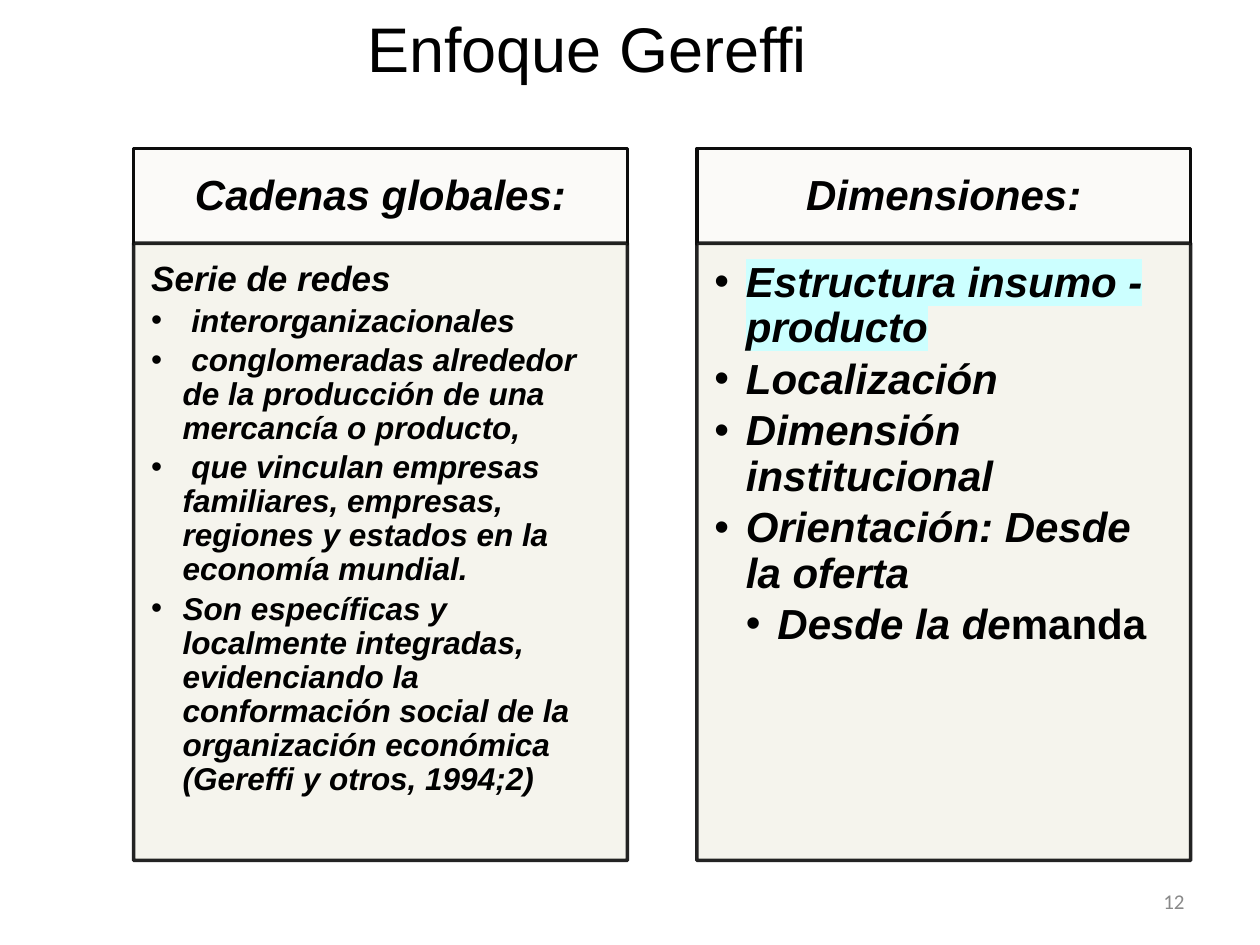
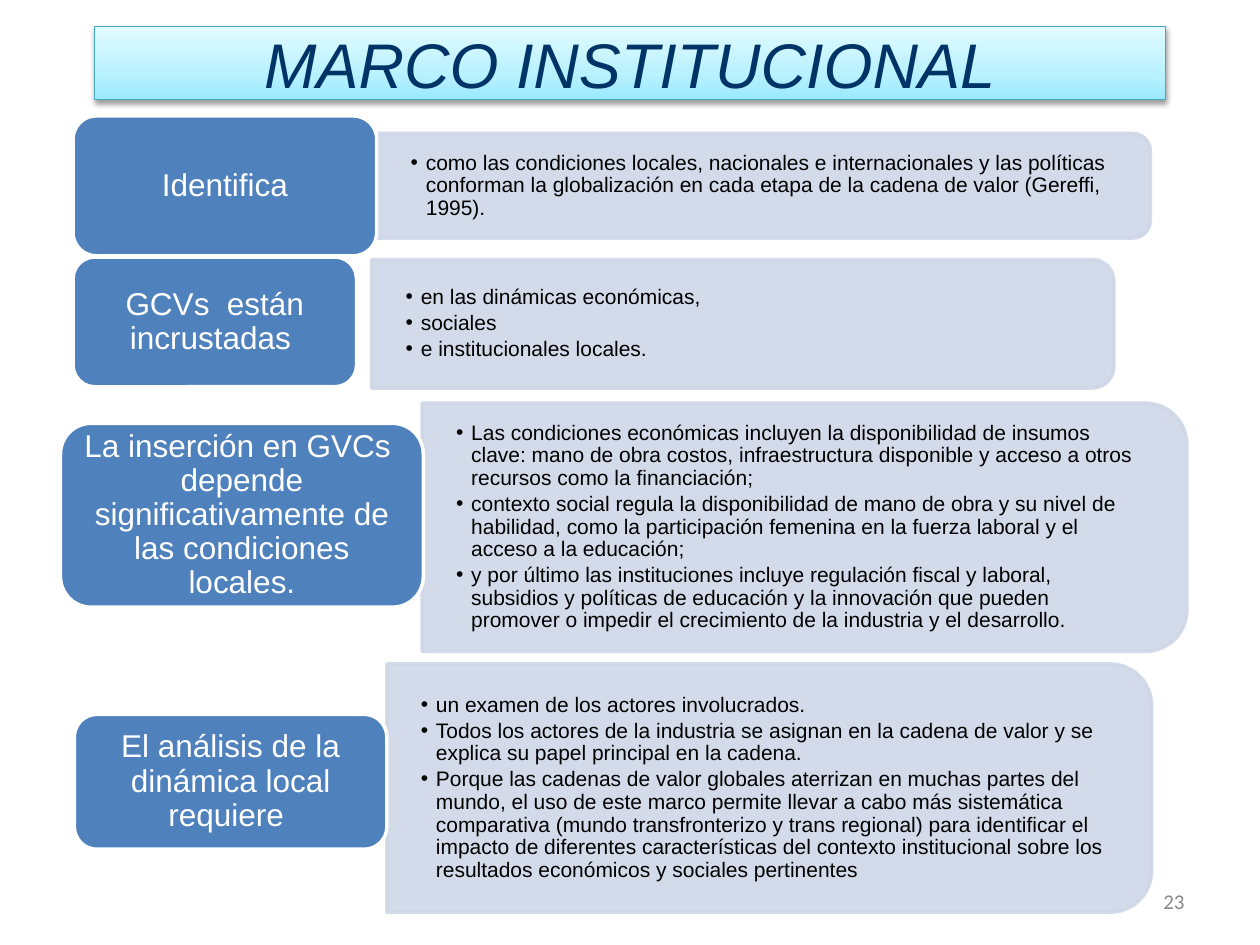
"""Build two slides: the approach in two cards and the institutional frame."""
from copy import deepcopy
from dataclasses import dataclass

from pptx import Presentation
from pptx.dml.color import RGBColor
from pptx.enum.shapes import MSO_SHAPE as Kind
from pptx.enum.text import MSO_ANCHOR as Anchor, MSO_AUTO_SIZE as Fit, PP_ALIGN as Align
from pptx.oxml import parse_xml
from pptx.oxml.ns import nsdecls, qn
from pptx.util import Pt
from lxml.etree import SubElement

PX = 9144


@dataclass(frozen=True)
class Theme:
    font: str = "Arial"
    small: str = "Calibri"
    ink: str = "000000"
    white: str = "FFFFFF"
    navy: str = "003366"
    grey: str = "898989"
    edge: str = "0C0C0C"
    head: str = "FBFAF8"
    body: str = "F4F3EC"
    mark: str = "CCFFFF"
    blue: str = "4F81BD"
    pale: str = "CFD7E7"
    rim: str = "45A9C4"
    low: str = "9BE9FF"
    mid: str = "B8F1FF"
    high: str = "E2FBFF"
    title: int = 36
    big: int = 24
    lead: int = 20
    text: int = 18
    note: int = 12


T = Theme()


def box(slide, kind, place, fill, line, alpha=100):
    shape = slide.shapes.add_shape(kind, *[round(n * PX) for n in place])
    shape.shadow.inherit = False
    shape.fill.solid()
    shape.fill.fore_color.rgb = RGBColor.from_string(fill)
    shape.line.color.rgb = RGBColor.from_string(line)
    shape.line.width = Pt(2)
    if alpha < 100:
        for tint in shape.element.spPr.iter(qn("a:srgbClr")):
            SubElement(tint, qn("a:alpha"), val=str(alpha * 1000))
    return shape


def write(shape, lines, size, color, pad=(10, 5, 10, 5), align=Align.CENTER,
          anchor=Anchor.MIDDLE, hang=0, gap=0, space=0.9, font=T.font,
          bold=False, slant=False):
    frame = shape.text_frame
    frame.text = "\n".join(lines)
    frame.word_wrap = True
    frame.auto_size = Fit.NONE
    frame.vertical_anchor = anchor
    frame.margin_left, frame.margin_top, frame.margin_right, frame.margin_bottom = [
        n * PX for n in pad]
    for spot, para in enumerate(frame.paragraphs):
        para.alignment = align
        para.line_spacing = space
        para.space_before = Pt(gap if spot else 0)
        for run in para.runs:
            run.font.name = font
            run.font.size = Pt(size)
            run.font.bold = bold
            run.font.italic = slant
            run.font.color.rgb = RGBColor.from_string(color)
        if hang:
            props = para._p.get_or_add_pPr()
            props.set("marL", str(hang * PX))
            props.set("indent", str(-hang * PX))
            tint = SubElement(props, qn("a:buClr"))
            SubElement(tint, qn("a:srgbClr"), val=T.ink)
            SubElement(props, qn("a:buFont"), typeface=T.font)
            SubElement(props, qn("a:buChar"), char="•")
    return frame.paragraphs


deck = Presentation()
deck.slide_width, deck.slide_height = 1000 * PX, 750 * PX

pages = []
for name, place, color, slant, num in [
    ("Enfoque Gereffi", (70, 0, 792, 75), T.ink, False, "12"),
    ("MARCO INSTITUCIONAL", (75, 21, 850, 58), T.navy, True, "23"),
]:
    slide = deck.slides.add_slide(deck.slide_layouts[5])
    title = slide.shapes.title
    title.left, title.top, title.width, title.height = [n * PX for n in place]
    write(title, [name], T.title, color, space=1.0, slant=slant)
    pages.append((slide, num))

first, last = [page[0] for page in pages]

cards = [
    ("Cadenas globales:", T.text, 3, [
        "Serie de redes",
        " interorganizacionales",
        " conglomeradas alrededor de la producción de una mercancía o producto,",
        " que vinculan empresas familiares, empresas, regiones y estados en la economía mundial.",
        "Son específicas y localmente integradas, evidenciando la conformación social de la "
        "organización económica (Gereffi y otros, 1994;2)",
    ]),
    ("Dimensiones:", T.big, 3.6, [
        "Estructura insumo - producto",
        "Localización",
        "Dimensión institucional",
        "Orientación: Desde la oferta",
        "Desde la de",
    ]),
]
lists = []
for col, (name, size, gap, lines) in enumerate(cards):
    left = 106 + col * 447
    head = box(first, Kind.RECTANGLE, (left, 118, 392, 76), T.head, T.edge)
    write(head, [name], T.big, T.ink, (19, 11, 19, 11), bold=True, slant=True)
    body = box(first, Kind.RECTANGLE, (left, 193, 392, 490), T.body, T.edge, 90)
    lists.append(write(body, lines, size, T.ink, (14, 14, 19, 21), Align.LEFT, Anchor.TOP,
                       25, gap, bold=True, slant=True))

chain, dims = lists
chain[0].runs[0].font.size = Pt(T.lead)
chain[1].space_before = Pt(3.6)
props = chain[0]._p.pPr
for tag in ("a:buClr", "a:buFont", "a:buChar"):
    props.remove(props.find(qn(tag)))
SubElement(props, qn("a:buNone"))

glow = parse_xml(f'<a:highlight {nsdecls("a")}><a:srgbClr val="{T.mark}"/></a:highlight>')
dims[0].runs[0]._r.rPr.find(qn("a:latin")).addprevious(glow)
dims[4].level = 1
dims[4]._p.pPr.set("marL", str(50 * PX))
stem = dims[4].runs[0]
stem._r.addnext(deepcopy(stem._r))
tail = dims[4].runs[1]
tail.text = "manda"
tail.font.italic = False

band = last.shapes.title
band.fill.gradient()
band.fill.gradient_angle = 90
stops = band.fill.gradient_stops
for stop, color in zip(stops, (T.low, T.high)):
    stop.color.rgb = RGBColor.from_string(color)
base = band.element.spPr.find(".//" + qn("a:gs"))
blend = deepcopy(base)
blend.set("pos", "35000")
blend[0].set("val", T.mid)
base.addnext(blend)
band.line.color.rgb = RGBColor.from_string(T.rim)
band.line.width = Pt(0.75)
band.element.spPr.append(parse_xml(
    f'<a:effectLst {nsdecls("a")}><a:outerShdw blurRad="40000" dist="20000" dir="5400000" '
    f'rotWithShape="0"><a:srgbClr val="{T.ink}"><a:alpha val="38000"/></a:srgbClr>'
    '</a:outerShdw></a:effectLst>'))

rows = [
    ("Identifica", (58, 92, 241, 111), (299, 106, 614, 83), [
        "como las condiciones locales, nacionales e internacionales y las políticas conforman "
        "la globalización en cada etapa de la cadena de valor (Gereffi, 1995).",
    ]),
    ("GCVs  están incrustadas ", (58, 204, 225, 103), (295, 206, 589, 102), [
        "en las dinámicas económicas,",
        "sociales",
        "e institucionales locales.",
    ]),
    ("La inserción en GVCs  depende significativamente de las condiciones locales.",
     (48, 336, 288, 146), (335, 320, 607, 197), [
        "Las condiciones económicas incluyen la disponibilidad de insumos clave: mano de obra "
        "costos, infraestructura disponible y acceso a otros recursos como la financiación;",
        "contexto social regula la disponibilidad de mano de obra y su nivel de habilidad, como "
        "la participación femenina en la fuerza laboral y el acceso a la educación;",
        "y por último las instituciones incluye regulación fiscal y laboral, subsidios y "
        "políticas de educación y la innovación que pueden promover o impedir el crecimiento "
        "de la industria y el desarrollo.",
     ]),
    ("El análisis de la dinámica local requiere ", (59, 567, 248, 107), (307, 527, 607, 197), [
        "un examen de los actores involucrados.",
        "Todos los actores de la industria se asignan en la cadena de valor y se explica su "
        "papel principal en la cadena.",
        "Porque las cadenas de valor globales aterrizan en muchas partes del mundo, el uso de "
        "este marco permite llevar a cabo más sistemática comparativa (mundo transfronterizo y "
        "trans regional) para identificar el impacto de diferentes características del contexto "
        "institucional sobre los resultados económicos y sociales pertinentes",
    ]),
]
for name, place, (x, y, wide, high), lines in rows:
    turned = (x + (wide - high) / 2, y + (high - wide) / 2, high, wide)
    bar = box(last, Kind.ROUND_2_SAME_RECTANGLE, turned, T.pale, T.pale, 90)
    bar.rotation = 90
    inset = round(high * 0.05)
    note = last.shapes.add_textbox(
        x * PX, (y + inset) * PX, (wide - inset) * PX, (high - 2 * inset) * PX)
    write(note, lines, T.note, T.ink, (27, 14, 27, 14), Align.LEFT, hang=12, gap=1.8)
    label = box(last, Kind.ROUNDED_RECTANGLE, place, T.blue, T.white)
    write(label, [name], T.text, T.white, (7, 4, 7, 4))

for slide, num in pages:
    foot = slide.shapes.add_textbox(717 * PX, 695 * PX, 233 * PX, 40 * PX)
    write(foot, [num], T.note, T.grey, align=Align.RIGHT, space=1.0, font=T.small)

deck.save("out.pptx")
